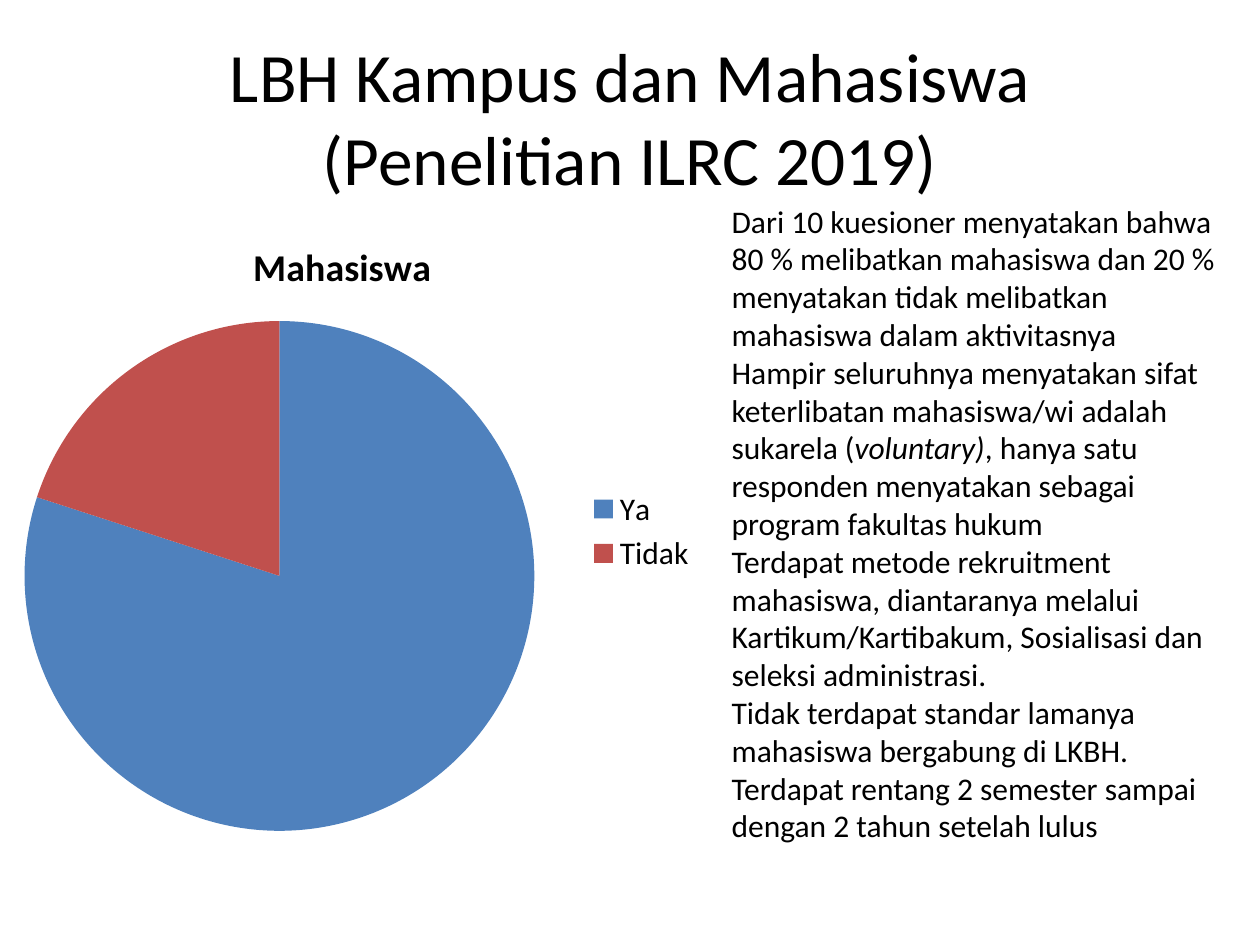
from pptx import Presentation
from pptx.chart.data import CategoryChartData
from pptx.dml.color import RGBColor
from pptx.enum.chart import XL_CHART_TYPE as ChartType, XL_LEGEND_POSITION as LegendPosition
from pptx.enum.text import MSO_ANCHOR as Anchor, MSO_AUTO_SIZE as AutoSize, PP_ALIGN as Align
from pptx.util import Cm, Pt

FONT = "Calibri"
COLORS = {"text": "000000", "Ya": "4F81BD", "Tidak": "C0504D"}
ANSWERS = {"Ya": 80, "Tidak": 20}

# Each finding is a list of (text, italic) pieces
FINDINGS = [
    [("Dari 10 kuesioner menyatakan bahwa 80 % melibatkan mahasiswa dan 20 % "
      "menyatakan tidak melibatkan mahasiswa dalam aktivitasnya", False)],
    [("Hampir seluruhnya menyatakan sifat keterlibatan mahasiswa/wi adalah sukarela (", False),
     ("voluntary)", True),
     (", hanya satu responden menyatakan sebagai program fakultas hukum", False)],
    [("Terdapat metode rekruitment mahasiswa, diantaranya melalui "
      "Kartikum/Kartibakum, Sosialisasi dan seleksi administrasi.", False)],
    [("Tidak terdapat standar lamanya mahasiswa bergabung di LKBH. Terdapat rentang "
      "2 semester sampai dengan 2 tahun setelah lulus", False)],
]


def set_font(font, size, bold=False):
    font.name = FONT
    font.size = Pt(size)
    font.bold = bold
    font.color.rgb = RGBColor.from_string(COLORS["text"])


def place_heading(slide, left, top, width, height):
    heading = slide.shapes.title
    heading.left, heading.top, heading.width, heading.height = left, top, width, height
    frame = heading.text_frame
    frame.text = "LBH Kampus dan Mahasiswa (Penelitian ILRC 2019)"
    frame.word_wrap = True
    frame.auto_size = AutoSize.NONE
    frame.vertical_anchor = Anchor.MIDDLE
    paragraph = frame.paragraphs[0]
    paragraph.alignment = Align.CENTER
    set_font(paragraph.font, 39.6)


def add_student_pie(slide, left, top, width, height):
    answers = CategoryChartData()
    answers.categories = list(ANSWERS)
    answers.add_series("Mahasiswa", list(ANSWERS.values()))
    pie = slide.shapes.add_chart(ChartType.PIE, left, top, width, height, answers).chart
    set_font(pie.font, 18)

    # Chart title and legend
    pie.has_title = True
    pie_title = pie.chart_title.text_frame
    pie_title.text = "Mahasiswa"
    set_font(pie_title.paragraphs[0].font, 21.6, bold=True)
    pie.has_legend = True
    pie.legend.position = LegendPosition.RIGHT
    pie.legend.include_in_layout = False

    # Slice colours
    plot = pie.plots[0]
    plot.vary_by_categories = True
    for index, answer in enumerate(ANSWERS):
        fill = plot.series[0].points[index].format.fill
        fill.solid()
        fill.fore_color.rgb = RGBColor.from_string(COLORS[answer])


def add_findings(slide, left, top, width, height):
    frame = slide.shapes.add_textbox(left, top, width, height).text_frame
    frame.word_wrap = True
    for index, pieces in enumerate(FINDINGS):
        paragraph = frame.add_paragraph() if index else frame.paragraphs[0]
        set_font(paragraph.font, 18)
        for text, italic in pieces:
            run = paragraph.add_run()
            run.text = text
            if italic:
                run.font.italic = True


def main():
    deck = Presentation()
    deck.slide_width, deck.slide_height = Cm(25.4), Cm(19.05)
    slide = deck.slides.add_slide(deck.slide_layouts[5])
    place_heading(slide, Cm(1.27), Cm(0.76), Cm(22.86), Cm(3.18))
    add_student_pie(slide, Cm(-0.5), Cm(4.32), Cm(14.8), Cm(12.78))
    add_findings(slide, Cm(14.5), Cm(3.94), Cm(10.9), Cm(15.65))
    deck.save("out.pptx")


if __name__ == "__main__":
    main()
